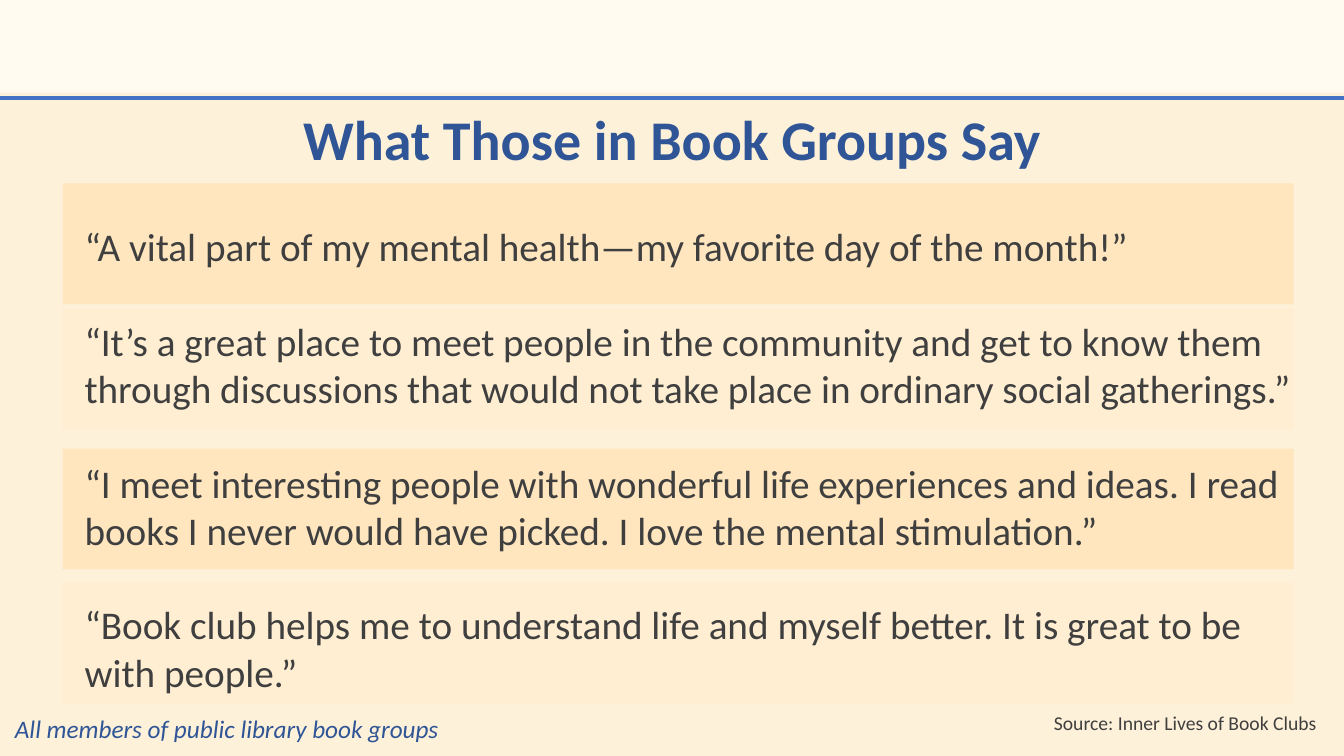
from dataclasses import dataclass

from pptx import Presentation
from pptx.dml.color import RGBColor
from pptx.enum.shapes import MSO_CONNECTOR, MSO_SHAPE
from pptx.enum.text import MSO_AUTO_SIZE, PP_ALIGN
from pptx.oxml.ns import qn
from pptx.slide import Slide
from pptx.util import Emu, Pt

LEFT, CENTER, RIGHT = PP_ALIGN.LEFT, PP_ALIGN.CENTER, PP_ALIGN.RIGHT
RECTANGLE = MSO_SHAPE.RECTANGLE
STRAIGHT = MSO_CONNECTOR.STRAIGHT
FIT_TEXT = MSO_AUTO_SIZE.SHAPE_TO_FIT_TEXT

EMU_PER_PX = 9144  # 100 px to the inch
SLIDE_WIDTH, SLIDE_HEIGHT = 1333, 750
RULE_Y = 97
FONT = "Calibri"
COLORS = {
    "background": "FEF1D9",
    "header": "FFFBF1",
    "rule": "4472C4",
    "dark band": "FFE6BE",
    "light band": "FFEED2",
    "heading": "2F5597",
    "body": "3F3F3F",
}


@dataclass(frozen=True)
class Band:
    left: int
    top: int
    width: int
    height: int
    color: str


@dataclass(frozen=True)
class TextBlock:
    left: int
    top: int
    width: int
    height: int
    paragraphs: tuple[str, ...]
    size: int
    color: str
    alignment: PP_ALIGN = LEFT
    bold: bool = False
    italic: bool = False
    gap: int = 0


QUOTES = (
    "“A vital part of my mental health—my favorite day of the month!”",
    "“It’s a great place to meet people in the community and get to know them "
    "through discussions that would not take place in ordinary social gatherings.”",
    "“I meet interesting people with wonderful life experiences and ideas. "
    "I read books I never would have picked. I love the mental stimulation.”",
    "“Book club helps me to understand life and myself better. "
    "It is great to be with people.”",
)
QUOTE_BAND_TOPS = (182, 306, 445, 578)

BANDS = [Band(0, 0, SLIDE_WIDTH, 92, "header")] + [
    Band(62, top, 1221, 120, "light band" if index % 2 else "dark band")
    for index, top in enumerate(QUOTE_BAND_TOPS)
]
TEXT_BLOCKS = (
    TextBlock(0, 99, SLIDE_WIDTH, 77, ("What Those in Book Groups Say",),
              40, "heading", CENTER, bold=True),
    TextBlock(74, 216, 1231, 481, QUOTES, 28, "body", gap=34),
    TextBlock(0, 703, 445, 40, ("All members of public library book groups",),
              18, "heading", RIGHT, italic=True),
    TextBlock(962, 700, 354, 34, ("Source: Inner Lives of Book Clubs",),
              14, "body", RIGHT),
)


def px(length: int) -> Emu:
    return Emu(length * EMU_PER_PX)


def color(name: str) -> RGBColor:
    return RGBColor.from_string(COLORS[name])


def add_band(slide: Slide, band: Band) -> None:
    shape = slide.shapes.add_shape(
        RECTANGLE, px(band.left), px(band.top), px(band.width), px(band.height))
    shape.shadow.inherit = False
    shape.fill.solid()
    shape.fill.fore_color.rgb = color(band.color)
    shape.line.fill.background()


def add_header_rule(slide: Slide) -> None:
    rule = slide.shapes.add_connector(
        STRAIGHT, px(0), px(RULE_Y), px(SLIDE_WIDTH), px(RULE_Y))
    rule.line.color.rgb = color("rule")
    rule.line.width = Pt(3)
    properties = rule._element.spPr
    properties.append(properties.makeelement(qn("a:effectLst"), {}))


def add_text_block(slide: Slide, block: TextBlock) -> None:
    box = slide.shapes.add_textbox(
        px(block.left), px(block.top), px(block.width), px(block.height))
    frame = box.text_frame
    frame.word_wrap = True
    frame.auto_size = FIT_TEXT
    for index, text in enumerate(block.paragraphs):
        paragraph = frame.add_paragraph() if index else frame.paragraphs[0]
        paragraph.text = text
        paragraph.alignment = block.alignment
        if index:
            paragraph.space_before = Pt(block.gap)
        font = paragraph.font
        font.name = FONT
        font.size = Pt(block.size)
        font.bold = block.bold
        font.italic = block.italic
        font.color.rgb = color(block.color)


def main() -> None:
    presentation = Presentation()
    presentation.slide_width = px(SLIDE_WIDTH)
    presentation.slide_height = px(SLIDE_HEIGHT)
    slide = presentation.slides.add_slide(presentation.slide_layouts[6])
    slide.background.fill.solid()
    slide.background.fill.fore_color.rgb = color("background")
    for band in BANDS:
        add_band(slide, band)
    add_header_rule(slide)
    for block in TEXT_BLOCKS:
        add_text_block(slide, block)
    presentation.save("out.pptx")


if __name__ == "__main__":
    main()
